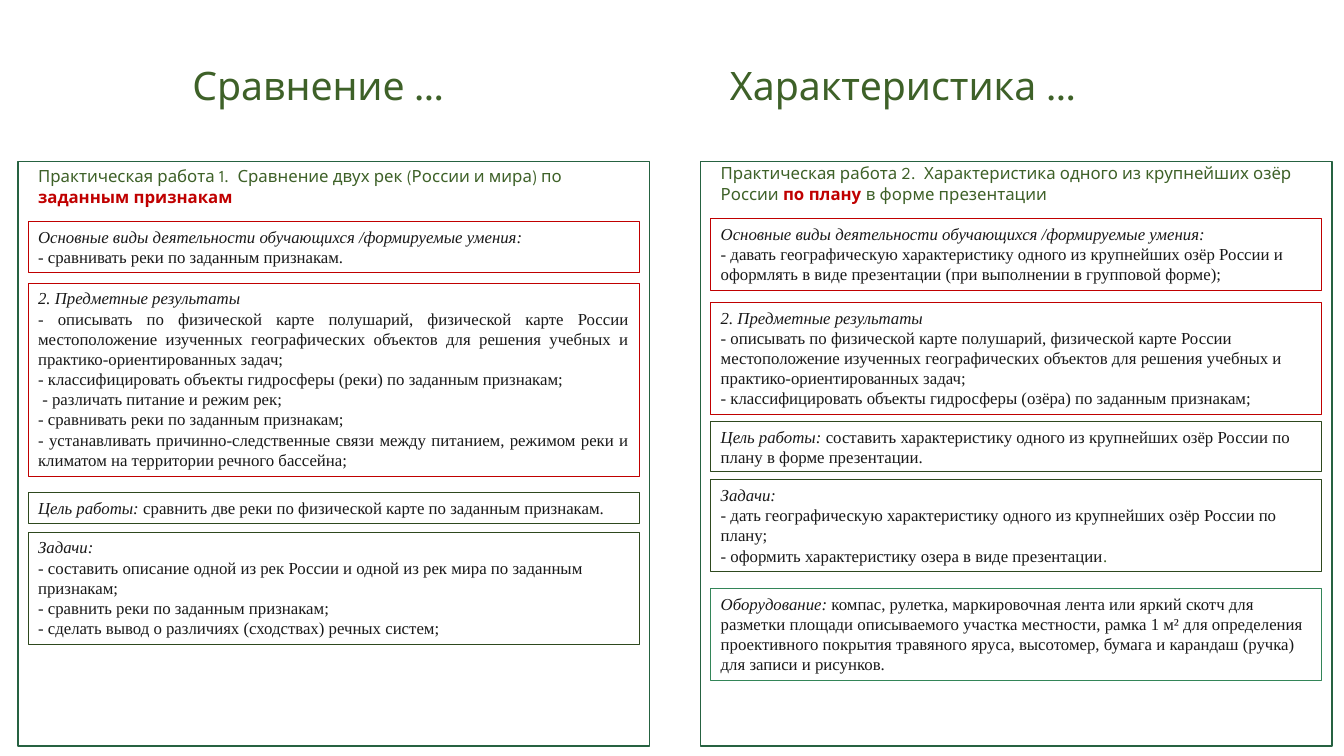
"""Builds a slide comparing two geography practical works side by side."""
import pptx
import pptx.dml.color
import pptx.enum.shapes
import pptx.enum.text
import pptx.util

COLORS = {
    "heading": "3E6128",
    "accent": "C00000",
    "body": "181818",
    "goal": "2E491E",
    "frame": "266241",
    "equipment": "338558",
}
STYLES = {
    "title": ("League Spartan", 28, "heading", False, False),
    "topic": ("League Spartan", 12, "heading", False, False),
    "key": ("League Spartan", 12, "accent", True, False),
    "label": ("Times New Roman", 12, "body", False, True),
    "body": ("Times New Roman", 12, "body", False, False),
    "stop": ("Times New Roman", 12, "heading", False, False),
}
EMU_PER_PX = 9144
CARD_WIDTH = 606
SKILLS = "Основные виды деятельности обучающихся /формируемые умения:"
RESULTS = "2. Предметные результаты"
MAP_READING = (
    "- описывать по физической карте полушарий, физической карте России "
    "местоположение изученных географических объектов для решения учебных "
    "и практико-ориентированных задач;"
)


class WorkSlide:
    """Holds the slide and draws its text, cards and frames."""

    def __init__(self, deck):
        self.slide = deck.slides.add_slide(deck.slide_layouts[6])

    def color(self, name):
        return pptx.dml.color.RGBColor.from_string(COLORS[name])

    def box(self, *bounds):
        return [pptx.util.Emu(length * EMU_PER_PX) for length in bounds]

    def fill_text(self, holder, paragraphs, justified=False):
        frame = holder.text_frame
        frame.word_wrap = True
        frame.auto_size = pptx.enum.text.MSO_AUTO_SIZE.SHAPE_TO_FIT_TEXT
        frame.vertical_anchor = pptx.enum.text.MSO_ANCHOR.TOP
        align = pptx.enum.text.PP_ALIGN
        for index, runs in enumerate(paragraphs):
            paragraph = frame.add_paragraph() if index else frame.paragraphs[0]
            paragraph.alignment = align.JUSTIFY if justified else align.LEFT
            for style, words in runs:
                run = paragraph.add_run()
                run.text = words
                font = run.font
                font.name, size, color, font.bold, font.italic = STYLES[style]
                font.size = pptx.util.Pt(size)
                font.color.rgb = self.color(color)

    def text(self, left, top, width, height, runs):
        holder = self.slide.shapes.add_textbox(*self.box(left, top, width, height))
        self.fill_text(holder, [runs])

    def outline(self, left, top, width, height, color, weight):
        shape = self.slide.shapes.add_shape(
            pptx.enum.shapes.MSO_SHAPE.RECTANGLE, *self.box(left, top, width, height)
        )
        shape.shadow.inherit = False
        shape.fill.background()
        shape.line.color.rgb = self.color(color)
        shape.line.width = pptx.util.Pt(weight)
        return shape

    def card(self, left, top, height, color, paragraphs, justified=False):
        shape = self.outline(left, top, CARD_WIDTH, height, color, 0.75)
        self.fill_text(shape, paragraphs, justified)

    def work(self, left, title, topic, cards):
        title_left, title_width, title_runs = title
        topic_top, topic_runs = topic
        self.text(title_left, 56, title_width, 57, title_runs)
        self.text(left, topic_top, CARD_WIDTH, 50, topic_runs)
        for card in cards:
            self.card(left, *card)
        self.outline(left - 10, 160, CARD_WIDTH + 20, 580, "frame", 1)


def listing(label, *items):
    """Returns a label paragraph followed by body paragraphs."""
    return [[("label", label)]] + [[("body", item)] for item in items]


def statement(label, words):
    """Returns one paragraph that opens with a label."""
    return [[("label", label), ("body", words)]]


RIVER_CARDS = [
    (220, 50, "accent", listing(SKILLS, "- сравнивать реки по заданным признакам.")),
    (281, 192, "accent", listing(
        RESULTS,
        MAP_READING,
        "- классифицировать объекты гидросферы (реки) по заданным признакам;",
        " - различать питание и режим рек;",
        "- сравнивать реки по заданным признакам;",
        "- устанавливать причинно-следственные связи между питанием, режимом "
        "реки и климатом на территории речного бассейна;",
    ), True),
    (489, 30, "goal", statement(
        "Цель работы:",
        " сравнить две реки по физической карте по заданным признакам.",
    )),
    (528, 111, "goal", listing(
        "Задачи:",
        "- составить описание одной из рек России и одной из рек мира по "
        "заданным признакам;",
        "- сравнить реки по заданным признакам;",
        "- сделать вывод о различиях (сходствах) речных систем;",
    )),
]
LAKE_TASKS = listing(
    "Задачи:",
    "- дать географическую характеристику одного из крупнейших озёр России по плану;",
    "- оформить характеристику озера в виде презентации",
)
LAKE_TASKS[-1].append(("stop", "."))
LAKE_CARDS = [
    (217, 71, "accent", listing(
        SKILLS,
        "- давать географическую характеристику одного из крупнейших озёр России "
        "и оформлять в виде презентации (при выполнении в групповой форме);",
    )),
    (300, 111, "accent", listing(
        RESULTS,
        MAP_READING,
        "- классифицировать объекты гидросферы (озёра) по заданным признакам;",
    )),
    (418, 50, "goal", statement(
        "Цель работы: ",
        "составить характеристику одного из крупнейших озёр России по плану "
        "в форме презентации.",
    )),
    (476, 91, "goal", LAKE_TASKS),
    (584, 91, "equipment", statement(
        "Оборудование:",
        " компас, рулетка, маркировочная лента или яркий скотч для разметки "
        "площади описываемого участка местности, рамка 1 м² для определения "
        "проективного покрытия травяного яруса, высотомер, бумага и карандаш "
        "(ручка) для записи и рисунков.",
    )),
]


def main():
    """Draws both practical works and saves the deck."""
    deck = pptx.Presentation()
    deck.slide_width = pptx.util.Emu(1333 * EMU_PER_PX)
    deck.slide_height = pptx.util.Emu(750 * EMU_PER_PX)
    page = WorkSlide(deck)
    page.work(
        28,
        (181, 309, [("title", "Сравнение …")]),
        (160, [
            ("topic", "Практическая работа 1.  Сравнение двух рек (России и мира) по "),
            ("key", "заданным признакам"),
        ]),
        RIVER_CARDS,
    )
    page.work(
        705,
        (714, 444, [("title", "Характеристика …")]),
        (157, [
            ("topic", "Практическая работа 2.  Характеристика одного из крупнейших озёр России "),
            ("key", "по плану "),
            ("topic", "в форме презентации"),
        ]),
        LAKE_CARDS,
    )
    deck.save("out.pptx")


if __name__ == "__main__":
    main()
